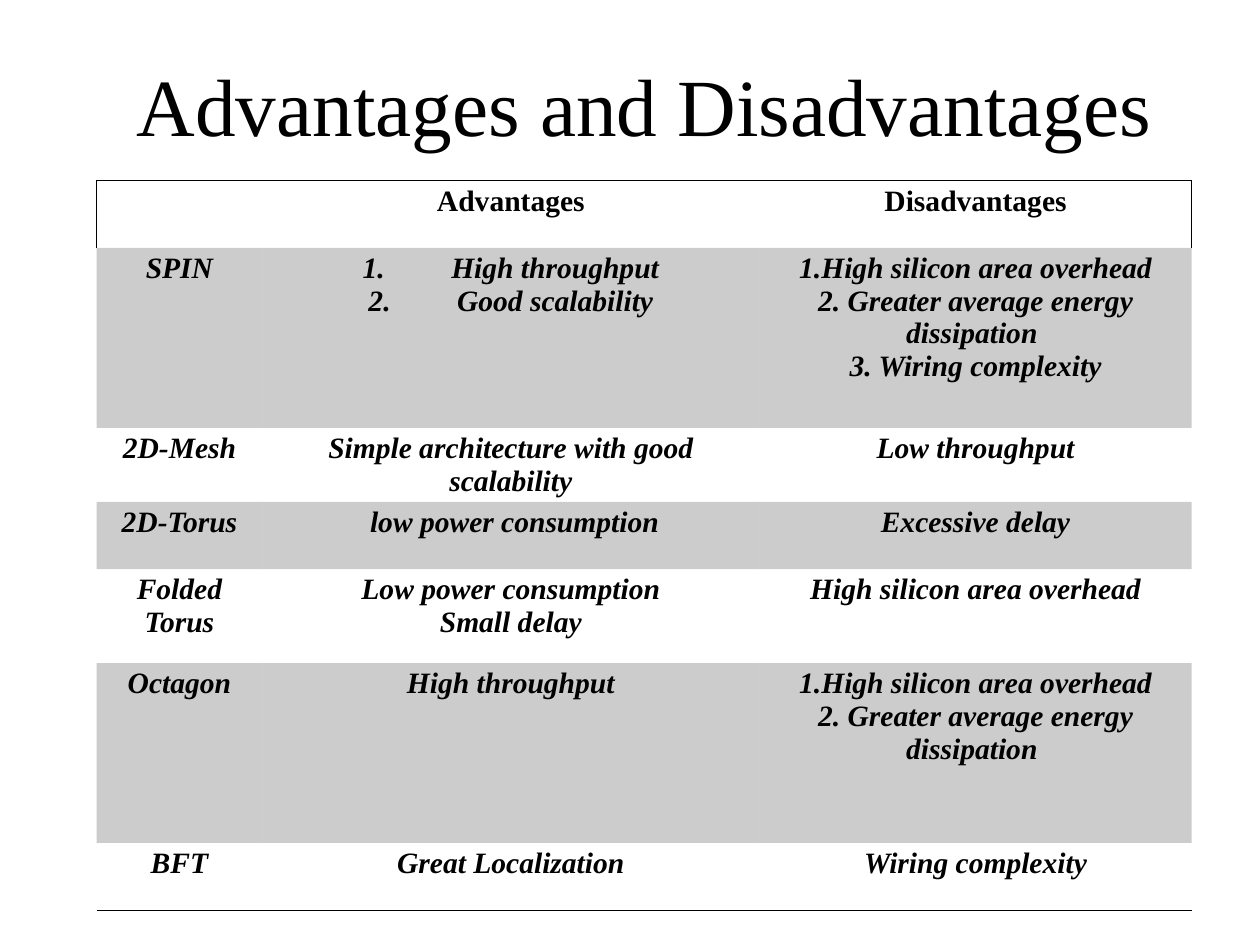
from lxml.etree import SubElement
from pptx import Presentation
from pptx.dml.color import RGBColor
from pptx.enum.text import MSO_ANCHOR, PP_ALIGN
from pptx.oxml.ns import qn
from pptx.util import Inches, Pt

BLACK = RGBColor(0, 0, 0)
FONT = "Times New Roman"
BAND_ALPHA = 20
COLUMN_WIDTHS = [1.87, 5.61, 4.88]
ROW_HEIGHTS = [0.76, 2.03, 0.76, 0.76, 1.06, 2.03, 0.76]

AREA = "1.High silicon area overhead"
ENERGY = "2. Greater average energy dissipation "
ROWS = [
    [[], ["Advantages"], ["Disadvantages"]],
    [["SPIN"], ["High throughput", "Good scalability"],
     [AREA, ENERGY, "3. Wiring complexity"]],
    [["2D-Mesh"], ["Simple architecture with good scalability"], ["Low throughput"]],
    [["2D-Torus"], [" low power consumption"], ["Excessive delay"]],
    [["Folded Torus"], ["Low power consumption", "Small delay"],
     ["High silicon area overhead"]],
    [["Octagon"], ["High throughput"], [AREA, ENERGY]],
    [["BFT"], ["Great Localization"], ["Wiring complexity"]],
]
BANDED_ROWS = (1, 3, 5)
NUMBERED_CELL = (1, 1)


def add_run(paragraph, text, size, bold=False, italic=False):
    paragraph.alignment = PP_ALIGN.CENTER
    run = paragraph.add_run()
    run.text = text
    font = run.font
    font.name, font.size = FONT, Pt(size)
    font.bold, font.italic = bold, italic
    font.color.rgb = BLACK


def number_paragraph(paragraph):
    properties = paragraph._p.get_or_add_pPr()
    properties.set("marL", str(Inches(1)))
    properties.set("indent", str(-Inches(1)))
    SubElement(properties, qn("a:buAutoNum"), type="arabicPeriod")


def set_borders(cell, visible_sides):
    """Draw the sides named by the letters L, R, T and B and clear the others."""
    properties = cell._tc.get_or_add_tcPr()
    for side in "LRTB":
        line = SubElement(properties, qn(f"a:ln{side}"), w=str(Pt(1)))
        if side in visible_sides:
            fill = SubElement(line, qn("a:solidFill"))
            SubElement(fill, qn("a:srgbClr"), val=str(BLACK))
        else:
            SubElement(line, qn("a:noFill"))


def fill_cell(cell, banded):
    if not banded:
        cell.fill.background()
        return
    cell.fill.solid()
    cell.fill.fore_color.rgb = BLACK
    color = cell._tc.tcPr.find(qn("a:solidFill")).find(qn("a:srgbClr"))
    SubElement(color, qn("a:alpha"), val=str(BAND_ALPHA * 1000))


def write_cell(cell, lines, header, numbered):
    cell.margin_left = cell.margin_right = Inches(0.05)
    cell.margin_top = cell.margin_bottom = Inches(0.05)
    frame = cell.text_frame
    for index, line in enumerate(lines):
        paragraph = frame.add_paragraph() if index else frame.paragraphs[0]
        add_run(paragraph, line, 24, bold=True, italic=not header)
        if numbered:
            number_paragraph(paragraph)


def border_sides(row, column):
    if row == 0:
        return "TB" + {0: "L", len(COLUMN_WIDTHS) - 1: "R"}.get(column, "")
    return "B" if row == len(ROWS) - 1 else ""


def add_title(slide, text):
    title = slide.shapes.title
    title.left, title.top = Inches(1.2), Inches(0)
    title.width, title.height = Inches(12.14), Inches(2.36)
    frame = title.text_frame
    frame.margin_left = frame.margin_right = Inches(0)
    frame.margin_top = frame.margin_bottom = Inches(0)
    frame.vertical_anchor = MSO_ANCHOR.MIDDLE
    frame.word_wrap = True
    add_run(frame.paragraphs[0], text, 66)


def add_comparison(slide):
    table = slide.shapes.add_table(
        len(ROWS), len(COLUMN_WIDTHS), Inches(1.09), Inches(2.04),
        Inches(sum(COLUMN_WIDTHS)), Inches(sum(ROW_HEIGHTS))).table
    table.first_row = table.horz_banding = False
    for column, width in zip(table.columns, COLUMN_WIDTHS):
        column.width = Inches(width)
    for row, height in zip(table.rows, ROW_HEIGHTS):
        row.height = Inches(height)
    for r, row in enumerate(ROWS):
        for c, lines in enumerate(row):
            cell = table.cell(r, c)
            write_cell(cell, lines, r == 0, (r, c) == NUMBERED_CELL)
            set_borders(cell, border_sides(r, c))
            fill_cell(cell, r in BANDED_ROWS)


def main():
    presentation = Presentation()
    presentation.slide_width = Inches(14.22)
    presentation.slide_height = Inches(10.67)
    slide = presentation.slides.add_slide(presentation.slide_layouts[5])
    add_title(slide, "Advantages and Disadvantages")
    add_comparison(slide)
    presentation.save("out.pptx")


if __name__ == "__main__":
    main()
